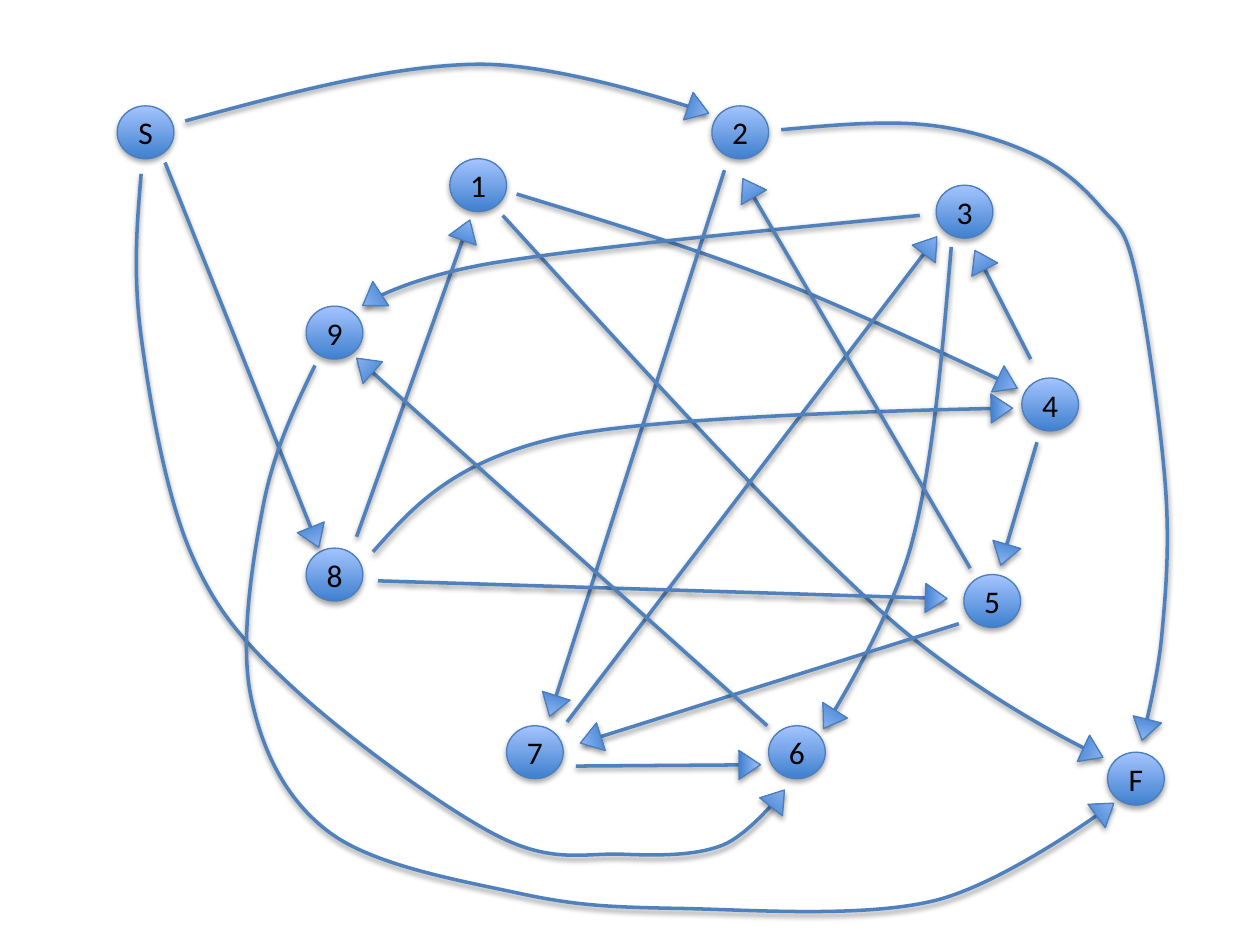
import math

import pptx
import pptx.dml.color
import pptx.enum.shapes
import pptx.enum.text
import pptx.oxml
import pptx.oxml.ns
import pptx.util
from pptx.util import Inches

SHAPE = pptx.enum.shapes.MSO_SHAPE
NODE_W, NODE_H = 0.45, 0.42
HEAD_W, HEAD_H = 0.23, 0.17
HEAD_SETBACK = 0.06

# label: left, top
NODES = {
    "S": (0.93, 0.84), "1": (3.57, 1.26), "2": (5.65, 0.84), "4": (8.11, 3),
    "3": (7.43, 1.47), "9": (2.43, 2.43), "8": (2.43, 4.35), "7": (4.02, 5.76),
    "6": (6.1, 5.76), "5": (7.65, 4.56), "F": (8.79, 5.97),
}

# (from, to): points passed; two make a straight line, more a smooth curve
EDGES = {
    ("S", "2"): [(1.47, 0.96), (3.78, 0.51), (5.6, 0.89)],
    ("1", "4"): [(4.1, 1.54), (6.15, 2.22), (8.05, 3.07)],
    ("8", "1"): [(2.83, 4.26), (3.72, 1.77)],
    ("2", "7"): [(5.75, 1.35), (4.37, 5.66)],
    ("1", "F"): [(3.99, 1.71), (6.98, 4.84), (8.73, 6)],
    ("4", "3"): [(8.18, 2.85), (7.75, 2.01)],
    ("3", "6"): [(7.55, 1.96), (7.24, 4.3), (6.55, 5.76)],
    ("7", "3"): [(4.5, 5.73), (7.42, 1.9)],
    ("3", "9"): [(7.3, 1.71), (3.96, 2.08), (2.9, 2.41)],
    ("4", "5"): [(8.23, 3.51), (7.95, 4.46)],
    ("8", "4"): [(2.96, 4.38), (4.44, 3.47), (8.01, 3.24)],
    ("8", "5"): [(3, 4.61), (7.49, 4.75)],
    ("5", "7"): [(7.61, 4.95), (4.63, 5.89)],
    ("5", "2"): [(7.7, 4.51), (5.91, 1.44)],
    ("7", "6"): [(4.57, 6.08), (6.01, 6.07)],
    ("S", "6"): [(1.12, 1.38), (1.12, 2.67), (1.52, 4.4), (2.35, 5.48),
                 (3.96, 6.64), (4.94, 6.78), (5.73, 6.71), (6.21, 6.29)],
    ("S", "8"): [(1.31, 1.29), (2.52, 4.32)],
    ("2", "F"): [(6.2, 1.03), (7.34, 0.99), (8.21, 1.23), (8.74, 1.65),
                 (9.01, 2.16), (9.25, 3.87), (9.22, 5.05), (9.07, 5.85)],
    ("9", "F"): [(2.5, 2.9), (2.09, 4.01), (1.99, 5.52), (2.62, 6.61),
                 (4.12, 7.09), (5.4, 7.21), (7.41, 7.15), (8.82, 6.39)],
    ("6", "9"): [(6.09, 5.76), (2.85, 2.86)],
}


def rgb(color):
    return pptx.dml.color.RGBColor.from_string(color)


def set_line(sp, color, width):
    sp.line.color.rgb = rgb(color)
    sp.line.width = pptx.util.Pt(width)


def add_shadow(sp, dist, alpha):
    """Append a soft downward shadow; call after fill and line are set."""
    sp._element.spPr.append(pptx.oxml.parse_xml(
        f'<a:effectLst {pptx.oxml.ns.nsdecls("a")}>'
        f'<a:outerShdw blurRad="{pptx.util.Pt(3.1)}" dist="{pptx.util.Pt(dist)}" '
        'dir="5400000" rotWithShape="0"><a:srgbClr val="000000">'
        f'<a:alpha val="{alpha * 1000}"/></a:srgbClr></a:outerShdw></a:effectLst>'))


def add_glossy(s, kind, x, y, w, h):
    sp = s.shapes.add_shape(kind, Inches(x), Inches(y), Inches(w), Inches(h))
    sp.fill.gradient()
    sp.fill.gradient_angle = 90
    for stop, color in zip(sp.fill.gradient_stops, ("3F80CE", "A4C4FF")):
        stop.color.rgb = rgb(color)
    set_line(sp, "4B7EBC", 0.75)
    add_shadow(sp, 1.8, 35)
    return sp


def write(sp, text, size=18, font="Calibri", color="000000"):
    tf = sp.text_frame
    tf.margin_left = tf.margin_right = tf.margin_top = tf.margin_bottom = 0
    tf.word_wrap = False
    tf.vertical_anchor = pptx.enum.text.MSO_ANCHOR.MIDDLE
    p = tf.paragraphs[0]
    p.alignment = pptx.enum.text.PP_ALIGN.CENTER
    r = p.add_run()
    r.text = text
    r.font.size = pptx.util.Pt(size)
    r.font.name = font
    r.font.color.rgb = rgb(color)


def bezier_triples(points):
    """Two controls and an end per segment of a smooth curve through points."""
    last = len(points) - 1
    slopes = [[(b - a) / 6 for a, b in zip(points[max(i - 1, 0)], points[min(i + 1, last)])]
              for i in range(last + 1)]
    slopes[last] = (0, 0)
    triples = []
    for i in range(last):
        start, end = points[i], points[i + 1]
        c2 = [v - d for v, d in zip(end, slopes[i + 1])]
        if i:
            c1 = [v + d for v, d in zip(start, slopes[i])]
        else:
            c1 = [(a + b) / 2 for a, b in zip(start, c2)]
        triples.append((c1, c2, end))
    return triples


def add_curve(s, points, triples):
    pts = [(Inches(x), Inches(y)) for x, y in points]
    builder = s.shapes.build_freeform(*pts[0])
    builder.add_line_segments(pts[1:], close=False)
    sp = builder.convert_to_shape()
    sp.fill.background()
    for segment, triple in zip(sp._element.xpath(".//a:path/a:lnTo"), triples):
        marks = "".join(f'<a:pt x="{Inches(x) - sp.left}" y="{Inches(y) - sp.top}"/>'
                        for x, y in triple)
        segment.getparent().replace(segment, pptx.oxml.parse_xml(
            f'<a:cubicBezTo {pptx.oxml.ns.nsdecls("a")}>{marks}</a:cubicBezTo>'))
    return sp


def add_head(s, before, tip):
    """Place a triangle near tip, pointing away from before."""
    dx, dy = tip[0] - before[0], tip[1] - before[1]
    length = math.hypot(dx, dy)
    x = tip[0] - HEAD_SETBACK * dx / length - HEAD_W / 2
    y = tip[1] - HEAD_SETBACK * dy / length - HEAD_H / 2
    head = add_glossy(s, SHAPE.ISOSCELES_TRIANGLE, x, y, HEAD_W, HEAD_H)
    head.rotation = math.degrees(math.atan2(dx, -dy)) % 360


def add_edge(s, points):
    before = points[0]
    if len(points) == 2:
        ends = [Inches(v) for point in points for v in point]
        sp = s.shapes.add_connector(pptx.enum.shapes.MSO_CONNECTOR.STRAIGHT, *ends)
    else:
        triples = bezier_triples(points)
        before = triples[-1][0]
        sp = add_curve(s, points, triples)
    set_line(sp, "4F81BD", 2)
    add_shadow(sp, 1.6, 38)
    add_head(s, before, points[-1])


def draw_graph(s):
    for label, (x, y) in NODES.items():
        write(add_glossy(s, SHAPE.OVAL, x, y, NODE_W, NODE_H), label)
    for points in EDGES.values():
        add_edge(s, points)


def main():
    prs = pptx.Presentation()
    prs.slide_width, prs.slide_height = Inches(10), Inches(7.5)
    draw_graph(prs.slides.add_slide(prs.slide_layouts[6]))
    prs.save("out.pptx")


if __name__ == "__main__":
    main()
